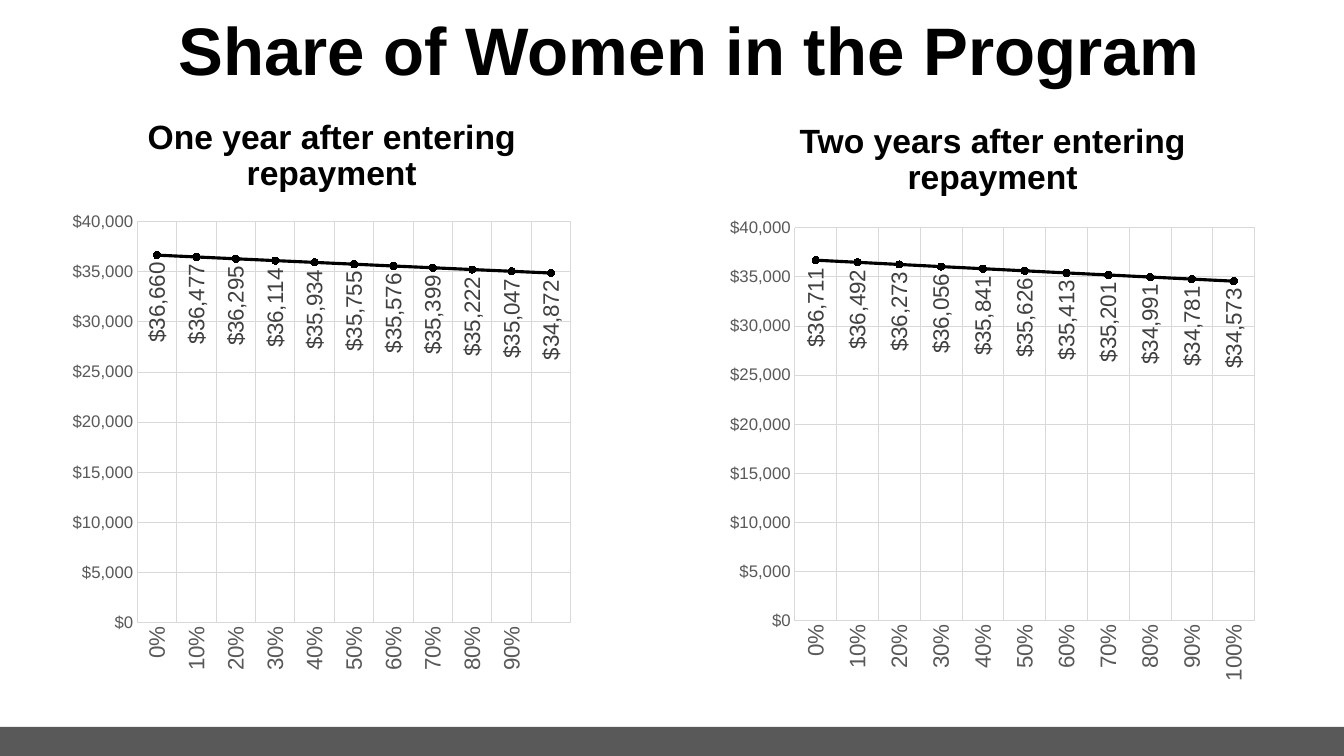
"""Build a slide with two line charts of earnings by share of women in the program."""
from dataclasses import dataclass

from pptx import Presentation
from pptx.chart.data import CategoryChartData
from pptx.dml.color import RGBColor
from pptx.enum.chart import XL_CHART_TYPE, XL_LABEL_POSITION, XL_MARKER_STYLE, XL_TICK_MARK
from pptx.enum.shapes import MSO_SHAPE
from pptx.enum.text import MSO_ANCHOR, MSO_AUTO_SIZE, PP_ALIGN
from pptx.oxml import parse_xml
from pptx.oxml.ns import nsdecls
from pptx.util import Inches, Pt


@dataclass(frozen=True)
class Theme:
    font: str = "Arial"
    ink: RGBColor = RGBColor(0x00, 0x00, 0x00)
    label: RGBColor = RGBColor(0x40, 0x40, 0x40)
    axis: RGBColor = RGBColor(0x59, 0x59, 0x59)
    grid: RGBColor = RGBColor(0xD9, 0xD9, 0xD9)
    title_size: int = 48
    heading_size: int = 24
    label_size: int = 16
    value_size: int = 12


theme = Theme()
DOLLARS = '"$"#,##0'


def style_font(font, size, color, bold=False):
    font.name = theme.font
    font.size = Pt(size)
    font.color.rgb = color
    font.bold = bold


def write_heading(box, text, place, size):
    box.left, box.top, box.width, box.height = map(Inches, place)
    frame = box.text_frame
    frame.text = text
    frame.word_wrap = True
    frame.auto_size = MSO_AUTO_SIZE.NONE
    frame.vertical_anchor = MSO_ANCHOR.MIDDLE
    para = frame.paragraphs[0]
    para.alignment = PP_ALIGN.CENTER
    para.line_spacing = 0.9
    para.space_before = Pt(0)
    style_font(para.runs[0].font, size, theme.ink, bold=True)


deck = Presentation()
deck.slide_width, deck.slide_height = Inches(13.33), Inches(7.5)
page = deck.slides.add_slide(deck.slide_layouts.get_by_name("Comparison"))

footer_bar = page.shapes.add_shape(
    MSO_SHAPE.RECTANGLE, 0, Inches(7.21), deck.slide_width, Inches(0.29))
footer_bar.shadow.inherit = False
footer_bar.fill.solid()
footer_bar.fill.fore_color.rgb = theme.axis
footer_bar.line.fill.background()

write_heading(page.shapes.title, "Share of Women in the Program",
              (0.61, 0.11, 12.46, 0.85), theme.title_size)

panels = [
    {"body": 1, "spare": 2, "heading": "One year after entering repayment",
     "heading_at": (0.61, 1.08, 5.36, 0.94), "chart_at": (0.61, 2.01, 5.15, 4.86),
     "plot": {"x": 0.146, "y": 0.039, "w": 0.835, "h": 0.819},
     "earnings": (36660, 36477, 36295, 36114, 35934, 35755,
                  35576, 35399, 35222, 35047, 34872)},
    {"body": 3, "spare": 4, "heading": "Two years after entering repayment",
     "heading_at": (6.97, 1.17, 5.75, 0.85), "chart_at": (7.12, 1.88, 5.45, 5.15),
     "plot": {"x": 0.14, "y": 0.074, "w": 0.837, "h": 0.757},
     "earnings": (36711, 36492, 36273, 36056, 35841, 35626,
                  35413, 35201, 34991, 34781, 34573)},
]

for panel in panels:
    placeholders = {box.placeholder_format.idx: box for box in page.placeholders}
    write_heading(placeholders[panel["body"]], panel["heading"],
                  panel["heading_at"], theme.heading_size)
    spare = placeholders[panel["spare"]].element
    spare.getparent().remove(spare)

    data = CategoryChartData(number_format=DOLLARS)
    data.categories = [f"{share}%" for share in range(0, 101, 10)]
    data.add_series("Series 1", panel["earnings"])
    chart = page.shapes.add_chart(
        XL_CHART_TYPE.LINE_MARKERS, *map(Inches, panel["chart_at"]), data).chart
    chart.has_title = False
    chart.has_legend = False
    style_font(chart.font, 10, theme.ink)

    shares, dollars = chart.category_axis, chart.value_axis
    for axis, size in ((shares, theme.label_size), (dollars, theme.value_size)):
        axis.has_major_gridlines = True
        axis.major_tick_mark = axis.minor_tick_mark = XL_TICK_MARK.NONE
        style_font(axis.tick_labels.font, size, theme.axis)
        for line in (axis.format.line, axis.major_gridlines.format.line):
            line.color.rgb = theme.grid
            line.width = Pt(0.75)
    dollars.format.line.fill.background()
    dollars.minimum_scale, dollars.maximum_scale = 0, 40000
    dollars.major_unit = 5000
    dollars.tick_labels.number_format = DOLLARS
    dollars.tick_labels.number_format_is_linked = False

    plot = chart.plots[0]
    plot.vary_by_categories = False
    trend = plot.series[0]
    trend.smooth = False
    trend.format.line.color.rgb = theme.ink
    trend.format.line.width = Pt(2.25)
    trend.marker.style = XL_MARKER_STYLE.CIRCLE
    trend.marker.size = 5
    trend.marker.format.fill.solid()
    trend.marker.format.fill.fore_color.rgb = theme.ink
    trend.marker.format.line.color.rgb = theme.ink

    labels = trend.data_labels
    labels.show_value = True
    labels.position = XL_LABEL_POSITION.BELOW
    labels.number_format = DOLLARS
    labels.number_format_is_linked = False
    style_font(labels.font, theme.label_size, theme.label)

    space = chart._chartSpace
    for body in space.xpath(".//c:catAx/c:txPr/a:bodyPr | .//c:dLbls/c:txPr/a:bodyPr"):
        body.set("rot", "-5400000")
        body.set("vert", "horz")

    area = space.xpath(".//c:plotArea")[0]
    for layout in area.xpath("./c:layout"):
        area.remove(layout)
    sides = "".join(f'<c:{side} val="{part}"/>' for side, part in panel["plot"].items())
    area.insert(0, parse_xml(
        f'<c:layout {nsdecls("c")}><c:manualLayout><c:layoutTarget val="inner"/>'
        f'<c:xMode val="edge"/><c:yMode val="edge"/>{sides}</c:manualLayout></c:layout>'))

deck.save("out.pptx")
